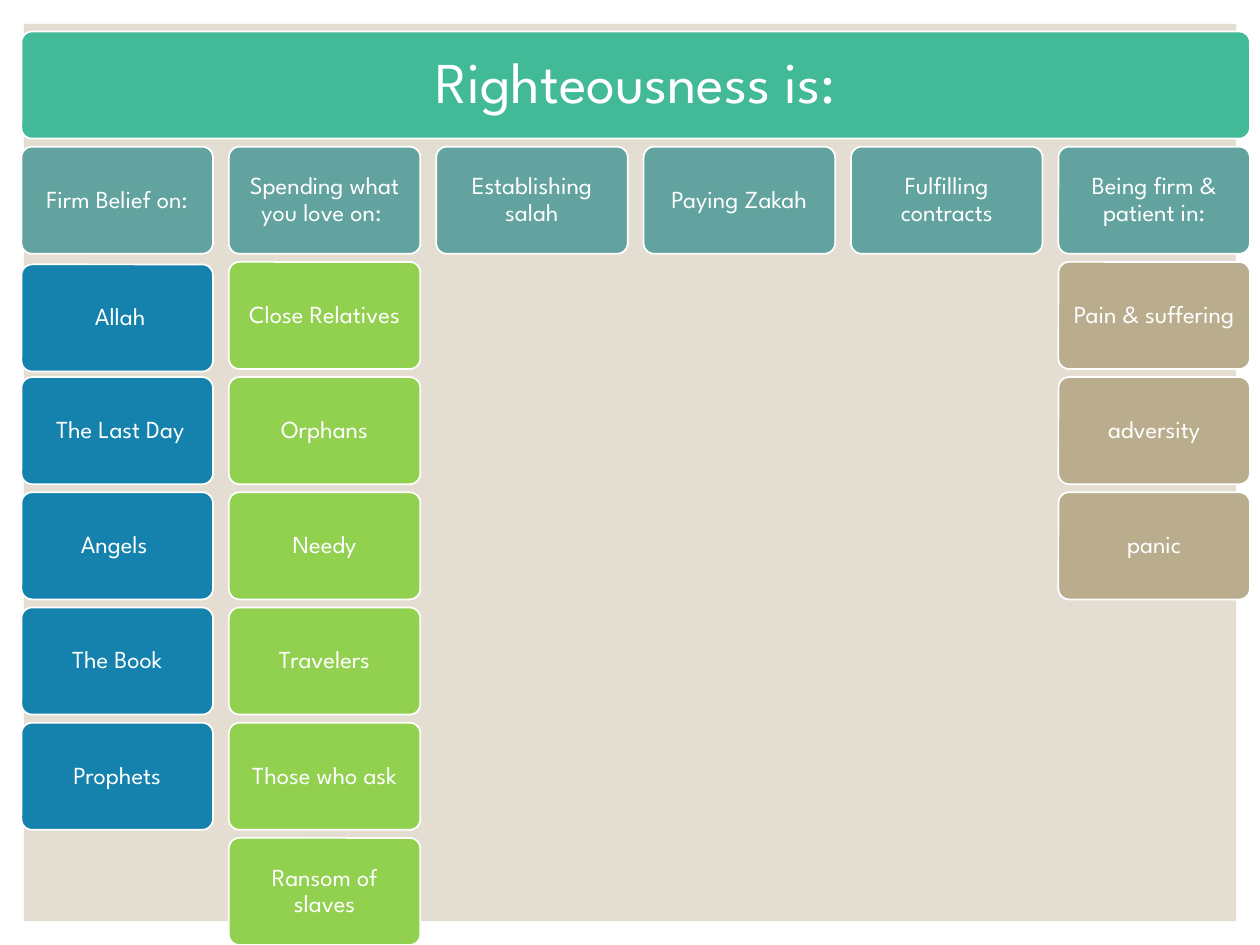
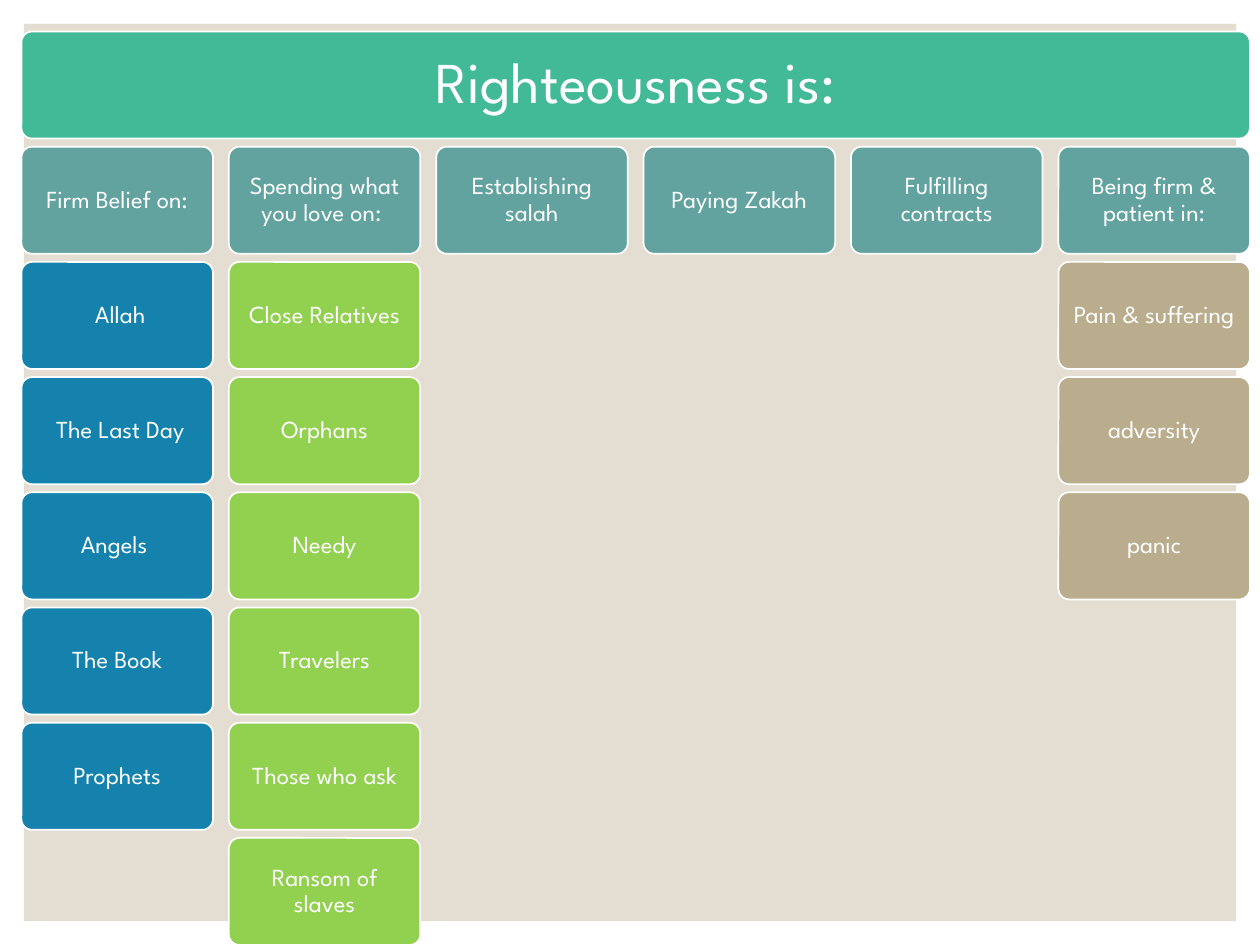
import pptx
import pptx.dml.color
import pptx.enum.shapes
import pptx.enum.text
import pptx.util

Inches = pptx.util.Inches
Pt = pptx.util.Pt
SHAPES = pptx.enum.shapes.MSO_SHAPE

COLOURS = {
    "white": "FFFFFF",
    "panel": "E3DED1",
    "title": "42BA97",
    "heading": "62A39F",
    "belief": "1482AC",
    "spending": "92D050",
    "patience": "BAAD8D",
}
FONT = "League Spartan"
TITLE = "Righteousness is:"
PANEL_BOX = (0.19, 0.19, 9.62, 7.12)
CHART_BOX = (0.17, 0.25, 9.75, 7.25)
CARD_WIDTH, CARD_HEIGHT = 1.52, 0.85
ROWS = 8
TITLE_FORMAT = {"size": 33, "inset": 0.14}
CARD_FORMAT = {"size": 14, "inset": 0.06}

BRANCHES = [
    ("Firm Belief on:", "belief",
     [" Allah", " The Last Day", "Angels ", "The Book", "Prophets"]),
    ("Spending what you love on: ", "spending",
     ["Close Relatives", "Orphans", "Needy", "Travelers", "Those who ask",
      "Ransom of slaves"]),
    ("Establishing salah", "heading", []),
    ("Paying Zakah", "heading", []),
    ("Fulfilling contracts", "heading", []),
    ("Being firm & patient in:", "patience",
     ["Pain & suffering", "adversity", "panic"]),
]


def rgb(name):
    """Return the named colour."""
    return pptx.dml.color.RGBColor.from_string(COLOURS[name])


def apply(target, formats):
    """Set each attribute of the target from a dict."""
    for attribute, value in formats.items():
        setattr(target, attribute, value)


def add_block(slide, preset, box, colour):
    """Add a flat filled shape in the given box."""
    block = slide.shapes.add_shape(preset, *map(Inches, box))
    block.shadow.inherit = False
    block.fill.solid()
    block.fill.fore_color.rgb = rgb(colour)
    return block


def add_panel(slide, box):
    """Add the beige panel behind the chart."""
    add_block(slide, SHAPES.RECTANGLE, box, "panel").line.fill.background()


def add_card(slide, box, colour, wording, size, inset):
    """Add a rounded, white-edged card with centred wording."""
    card = add_block(slide, SHAPES.ROUNDED_RECTANGLE, box, colour)
    card.adjustments[0] = 0.1
    card.line.color.rgb = rgb("white")
    card.line.width = Pt(1)
    frame = card.text_frame
    apply(frame, {
        "word_wrap": True,
        "vertical_anchor": pptx.enum.text.MSO_ANCHOR.MIDDLE,
        **{f"margin_{side}": Inches(inset)
           for side in ("left", "top", "right", "bottom")},
    })
    paragraph = frame.paragraphs[0]
    apply(paragraph, {
        "alignment": pptx.enum.text.PP_ALIGN.CENTER,
        "line_spacing": 0.9,
        "space_after": Pt(0.35 * size),
    })
    run = paragraph.add_run()
    run.text = wording
    apply(run.font, {"name": FONT, "size": Pt(size)})
    run.font.color.rgb = rgb("white")


def add_branch(slide, left, top, row_pitch, branch, first_item_drop):
    """Add a heading card and the column of its items below it."""
    heading, colour, items = branch
    cards = [(heading, "heading")] + [(item, colour) for item in items]
    for row, (wording, fill) in enumerate(cards):
        drop = first_item_drop if row == 1 else 0
        box = (left, top + row * row_pitch + drop, CARD_WIDTH, CARD_HEIGHT)
        add_card(slide, box, fill, wording, **CARD_FORMAT)


def add_righteousness_chart(slide, box, belief_drop):
    """Fill the box with the title bar and an even row of branches."""
    left, top, width, height = box
    row_pitch = (height - CARD_HEIGHT) / (ROWS - 1)
    column_pitch = (width - CARD_WIDTH) / (len(BRANCHES) - 1)
    add_card(slide, (left, top, width, CARD_HEIGHT), "title", TITLE,
             **TITLE_FORMAT)
    for column, branch in enumerate(BRANCHES):
        add_branch(slide, left + column * column_pitch, top + row_pitch,
                   row_pitch, branch, 0 if column else belief_drop)


def main():
    """Build both slides and save the presentation."""
    deck = pptx.Presentation()
    deck.slide_width, deck.slide_height = Inches(10), Inches(7.5)
    for belief_drop in (0.02, 0):
        slide = deck.slides.add_slide(deck.slide_layouts[6])
        add_panel(slide, PANEL_BOX)
        add_righteousness_chart(slide, CHART_BOX, belief_drop)
    deck.save("out.pptx")


if __name__ == "__main__":
    main()
